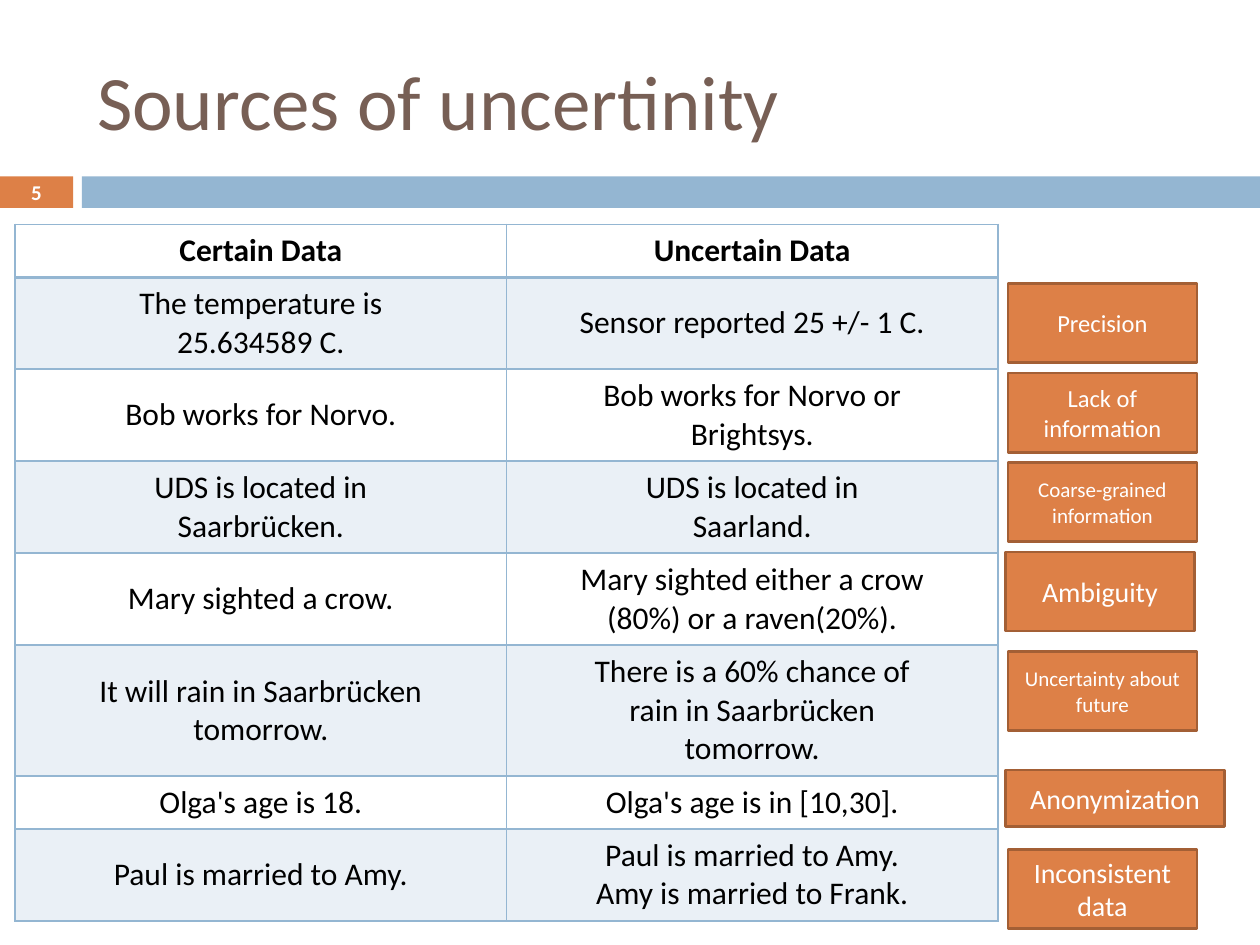
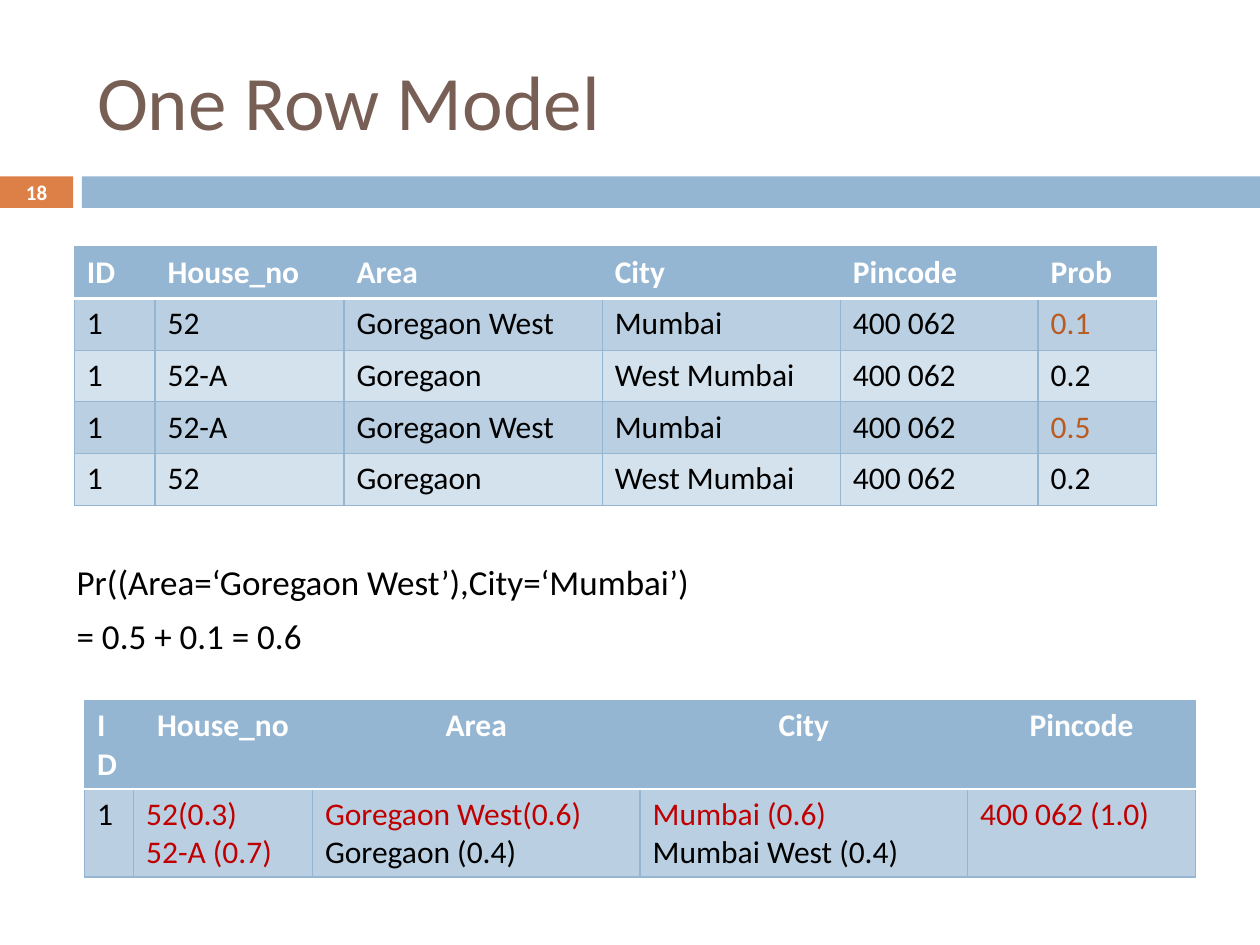
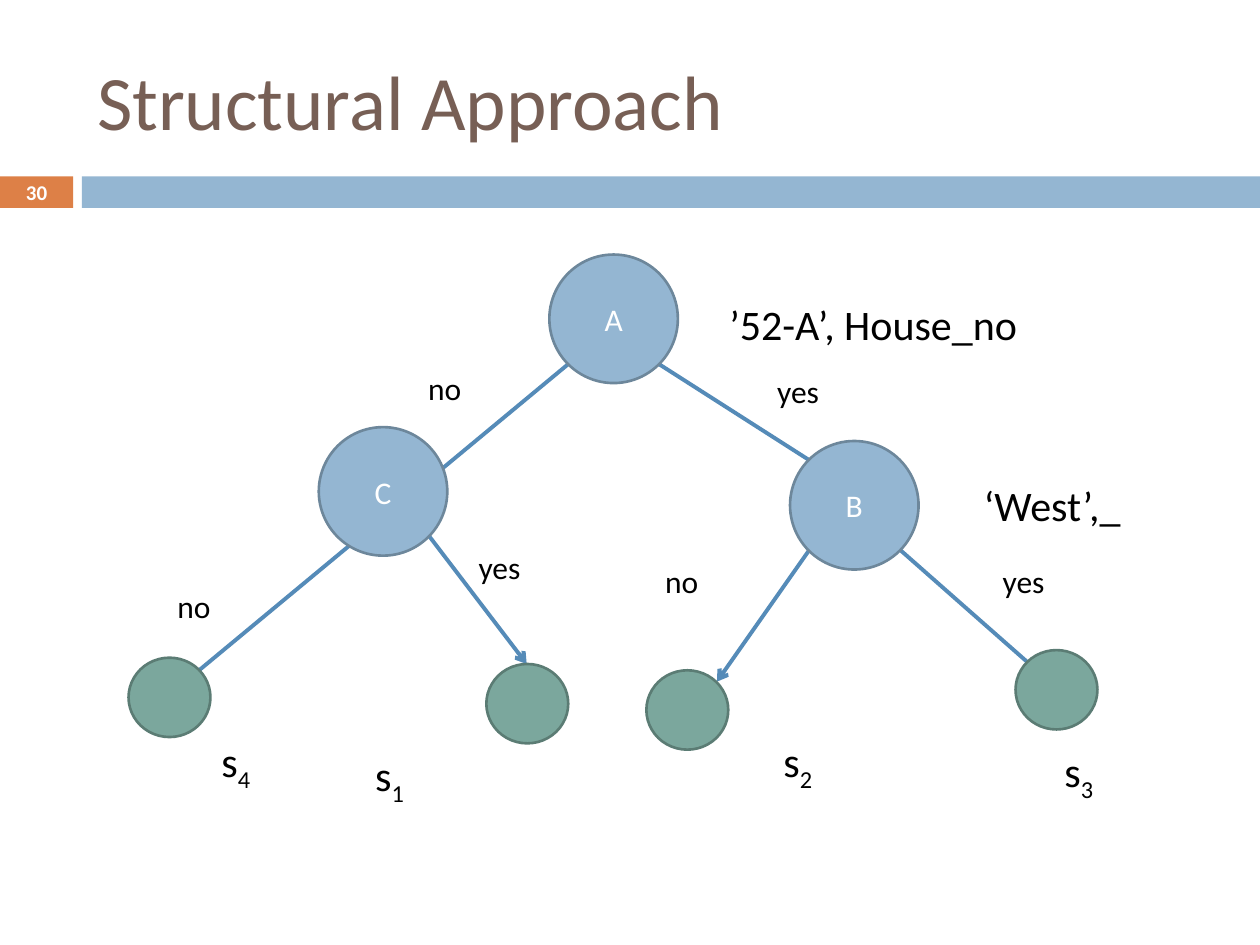
"""Build three slides on uncertain data: sources, one row model, decision tree."""
from lxml import etree
from pptx import Presentation
from pptx.dml.color import RGBColor
from pptx.enum.shapes import MSO_CONNECTOR, MSO_SHAPE
from pptx.enum.text import MSO_ANCHOR, MSO_AUTO_SIZE, PP_ALIGN
from pptx.oxml.ns import qn
from pptx.util import Inches, Pt

RECT, OVAL = MSO_SHAPE.RECTANGLE, MSO_SHAPE.OVAL
STRAIGHT = MSO_CONNECTOR.STRAIGHT
LEFT, CENTER = PP_ALIGN.LEFT, PP_ALIGN.CENTER
TOP, MIDDLE = MSO_ANCHOR.TOP, MSO_ANCHOR.MIDDLE
NO_FIT = MSO_AUTO_SIZE.NONE

FONT = "Calibri"
COLORS = {
    "title": "775F55", "black": "000000", "white": "FFFFFF",
    "blue": "94B6D2", "blue_edge": "6D879B", "branch": "558BB8",
    "orange": "DD8047", "orange_edge": "A35F35",
    "green": "7BA79D", "green_edge": "5B7C74",
    "pale": "EAF0F6", "light": "D4E2ED", "mid": "BAD0E2",
    "rust": "B95B22", "red": "C00000",
}


def rgb(name):
    """Return the named colour."""
    return RGBColor.from_string(COLORS[name])


class Deck:
    """Hold the shared style and the current slide."""

    def __init__(self):
        """Start an empty 10 by 7.5 inch presentation."""
        self.prs = Presentation()
        self.prs.slide_width, self.prs.slide_height = Inches(10), Inches(7.5)
        self.s = None

    def slide(self, title, number):
        """Add a slide with title, band and slide number."""
        self.s = self.prs.slides.add_slide(self.prs.slide_layouts[5])
        sp = self.s.shapes.title
        sp.left, sp.top, sp.width, sp.height = map(Inches, (0.67, 0.25, 8.92, 1.08))
        self.set_text(sp.text_frame, title, 44, "title", anchor=MIDDLE)
        sp.text_frame.auto_size = NO_FIT
        box = self.shape(RECT, (0, 1.4, 0.58, 0.25), "orange", text=str(number),
                         size=12, bold=True)
        box.text_frame.margin_top = box.text_frame.margin_bottom = 0
        self.shape(RECT, (0.65, 1.4, 9.35, 0.25), "blue")

    def set_text(self, tf, text, size, color="black", align=LEFT, anchor=TOP,
                 bold=False, gap=0, accents=None):
        """Fill a text frame, one paragraph for each line."""
        tf.vertical_anchor = anchor
        for i, line in enumerate(text.split("\n")):
            p = tf.add_paragraph() if i else tf.paragraphs[0]
            p.text = line
            p.alignment = align
            p.space_before = Pt(gap if i else 0)
            p.font.name, p.font.size, p.font.bold = FONT, Pt(size), bold
            p.font.color.rgb = rgb((accents or {}).get(line, color))

    def shape(self, kind, at, fill, edge=None, text="", size=18, bold=False):
        """Add a flat preset shape with centred white text."""
        sp = self.s.shapes.add_shape(kind, *map(Inches, at))
        sp.shadow.inherit = False
        sp.fill.solid()
        sp.fill.fore_color.rgb = rgb(fill)
        if edge:
            sp.line.color.rgb = rgb(edge)
            sp.line.width = Pt(1.5)
        else:
            sp.line.fill.background()
        if text:
            self.set_text(sp.text_frame, text, size, "white", CENTER, MIDDLE, bold)
        return sp

    def text(self, text, at, size, sub="", gap=0):
        """Add a text box, with an optional subscript at its end."""
        tf = self.s.shapes.add_textbox(*map(Inches, at)).text_frame
        tf.word_wrap = True
        self.set_text(tf, text, size, gap=gap)
        if sub:
            r = tf.paragraphs[-1].add_run()
            r.text = sub
            r._r.get_or_add_rPr().set("baseline", "-25000")

    def line(self, start, end, arrow=False):
        """Add a branch line, with an optional arrowhead at its end."""
        c = self.s.shapes.add_connector(STRAIGHT, *map(Inches, start + end))
        c.line.color.rgb = rgb("branch")
        c.line.width = Pt(2.25)
        if arrow:
            etree.SubElement(c.line._get_or_add_ln(), qn("a:tailEnd"), type="arrow")
        etree.SubElement(c._element.spPr, qn("a:effectLst"))

    def border(self, cell, side, color, width):
        """Draw one side of a table cell."""
        ln = etree.SubElement(cell._tc.get_or_add_tcPr(), qn("a:ln" + side),
                              w=str(Pt(width)))
        fill = etree.SubElement(ln, qn("a:solidFill"))
        etree.SubElement(fill, qn("a:srgbClr"), val=COLORS[color])

    def table(self, rows, at, widths, heights, head, bands, rule, edge=0.79,
              align=LEFT, head_align=LEFT, anchor=TOP, accents=None):
        """Add a banded table; head is (fill, font colour), rule is (colour, width)."""
        size = (sum(widths), sum(heights))
        table = self.s.shapes.add_table(len(rows), len(widths),
                                        *map(Inches, at + size)).table
        for column, width in zip(table.columns, widths):
            column.width = Inches(width)
        for i, row in enumerate(rows):
            table.rows[i].height = Inches(heights[i])
            fill, color = (bands[(i - 1) % 2], "black") if i else head
            for j, text in enumerate(row):
                cell = table.cell(i, j)
                for side in "LRTB":
                    ruled = (i, side) in ((0, "B"), (1, "T"))
                    self.border(cell, side, *(rule if ruled else ("blue", edge)))
                cell.fill.solid()
                cell.fill.fore_color.rgb = rgb(fill)
                cell_align = align if i or j == 0 else head_align
                self.set_text(cell.text_frame, text, 18, color, cell_align,
                              bold=i == 0, accents=accents)
                cell.vertical_anchor = anchor


def sources(d):
    """Compare certain and uncertain data."""
    d.slide("Sources of uncertinity", 5)
    rows = [
        ("Certain Data", "Uncertain Data"),
        ("The temperature is\n25.634589 C.", "Sensor reported 25 +/- 1 C."),
        ("Bob works for Norvo.", "Bob works for Norvo or\nBrightsys."),
        ("UDS is located in\nSaarbrücken.", "UDS is located in\nSaarland."),
        ("Mary sighted a crow.", "Mary sighted either a crow\n(80%) or a raven(20%)."),
        ("It will rain in Saarbrücken\ntomorrow.",
         "There is a 60% chance of\nrain in Saarbrücken\ntomorrow."),
        ("Olga's age is 18.", "Olga's age is in [10,30]."),
        ("Paul is married to Amy.", "Paul is married to Amy.\nAmy is married to Frank."),
    ]
    d.table(rows, (0.12, 1.78), (3.9, 3.9),
            (0.42, 0.73, 0.73, 0.73, 0.73, 1.04, 0.42, 0.73),
            head=("white", "black"), bands=("pale", "white"), rule=("blue", 2),
            edge=1, align=CENTER, head_align=CENTER, anchor=MIDDLE)
    tags = [
        ("Precision", 14, (8, 2.25, 1.5, 0.63)),
        ("Lack of information", 14, (8, 2.96, 1.5, 0.63)),
        ("Coarse-grained\ninformation", 12, (8, 3.67, 1.5, 0.63)),
        ("Ambiguity", 16, (7.98, 4.38, 1.5, 0.63)),
        ("Uncertainty about\nfuture", 12, (8, 5.17, 1.5, 0.63)),
        ("Anonymization", 16, (7.98, 6.11, 1.74, 0.45)),
        ("Inconsistent data", 16, (8, 6.74, 1.5, 0.63)),
    ]
    for text, size, at in tags:
        d.shape(RECT, at, "orange", "orange_edge", text, size)


def one_row_model(d):
    """Show address segmentations and the single row built from them."""
    d.slide("One Row Model", 18)
    style = dict(head=("blue", "white"), bands=("mid", "light"), rule=("white", 1.5))
    rows = [
        ("ID", "House_no", "Area", "City", "Pincode", "Prob"),
        ("1", "52", "Goregaon West", "Mumbai", "400 062", "0.1"),
        ("1", "52-A", "Goregaon", "West Mumbai", "400 062", "0.2"),
        ("1", "52-A", "Goregaon West", "Mumbai", "400 062", "0.5"),
        ("1", "52", "Goregaon", "West Mumbai", "400 062", "0.2"),
    ]
    d.table(rows, (0.59, 1.96), (0.64, 1.5, 2.05, 1.89, 1.57, 0.94),
            [0.41] * len(rows), accents={"0.1": "rust", "0.5": "rust"}, **style)
    d.text("Pr((Area=‘Goregaon West’),City=‘Mumbai’)\n= 0.5 + 0.1 = 0.6",
           (0.51, 4.4, 9.29, 1), 20, gap=7)
    rows = [
        ("ID", "House_no", "Area", "City", "Pincode"),
        ("1", "52(0.3)\n52-A (0.7)", "Goregaon West(0.6)\nGoregaon (0.4)",
         "Mumbai (0.6)\nMumbai West (0.4)", "400 062 (1.0)"),
    ]
    likely = ("52(0.3)", "52-A (0.7)", "Goregaon West(0.6)", "Mumbai (0.6)",
              "400 062 (1.0)")
    d.table(rows, (0.67, 5.56), (0.39, 1.42, 2.6, 2.6, 1.81), (0.7, 0.7),
            head_align=CENTER, accents=dict.fromkeys(likely, "red"), **style)


def structural_approach(d):
    """Draw the decision tree."""
    d.slide("Structural Approach", 30)
    branches = [
        ((4.51, 2.89), (1.58, 5.32), False),
        ((5.23, 2.89), (6.42, 3.65), False),
        ((6.42, 4.37), (5.69, 5.41), True),
        ((7.15, 4.37), (8.16, 5.26), False),
        ((3.41, 4.26), (4.18, 5.27), True),
    ]
    for start, end, arrow in branches:
        d.line(start, end, arrow)
    for name, x, y in (("A", 4.36, 2.02), ("B", 6.27, 3.5), ("C", 2.53, 3.39)):
        d.shape(OVAL, (x, y, 1.02, 1.02), "blue", "blue_edge", name)
    for x, y in ((1.02, 5.22), (3.86, 5.27), (5.13, 5.32), (8.06, 5.16)):
        d.shape(OVAL, (x, y, 0.65, 0.63), "green", "green_edge")
    for sub, x, y in (("1", 2.88, 5.9), ("2", 6.12, 5.79),
                      ("3", 8.35, 5.87), ("4", 1.66, 5.79)):
        d.text("s", (x, y, 0.6, 0.5), 24, sub)
    d.text("’52-A’, House_no", (5.69, 2.32, 2.86, 0.5), 24)
    d.text("‘West’,_", (7.71, 3.76, 1.69, 0.5), 24)
    answers = [("yes", 6.07, 2.9), ("yes", 7.86, 4.41), ("yes", 3.7, 4.3),
               ("no", 5.18, 4.41), ("no", 3.3, 2.88), ("no", 1.31, 4.61)]
    for answer, x, y in answers:
        d.text(answer, (x, y, 0.84, 0.4), 18)


def main():
    """Build and save the slides."""
    d = Deck()
    sources(d)
    one_row_model(d)
    structural_approach(d)
    d.prs.save("out.pptx")


if __name__ == "__main__":
    main()
